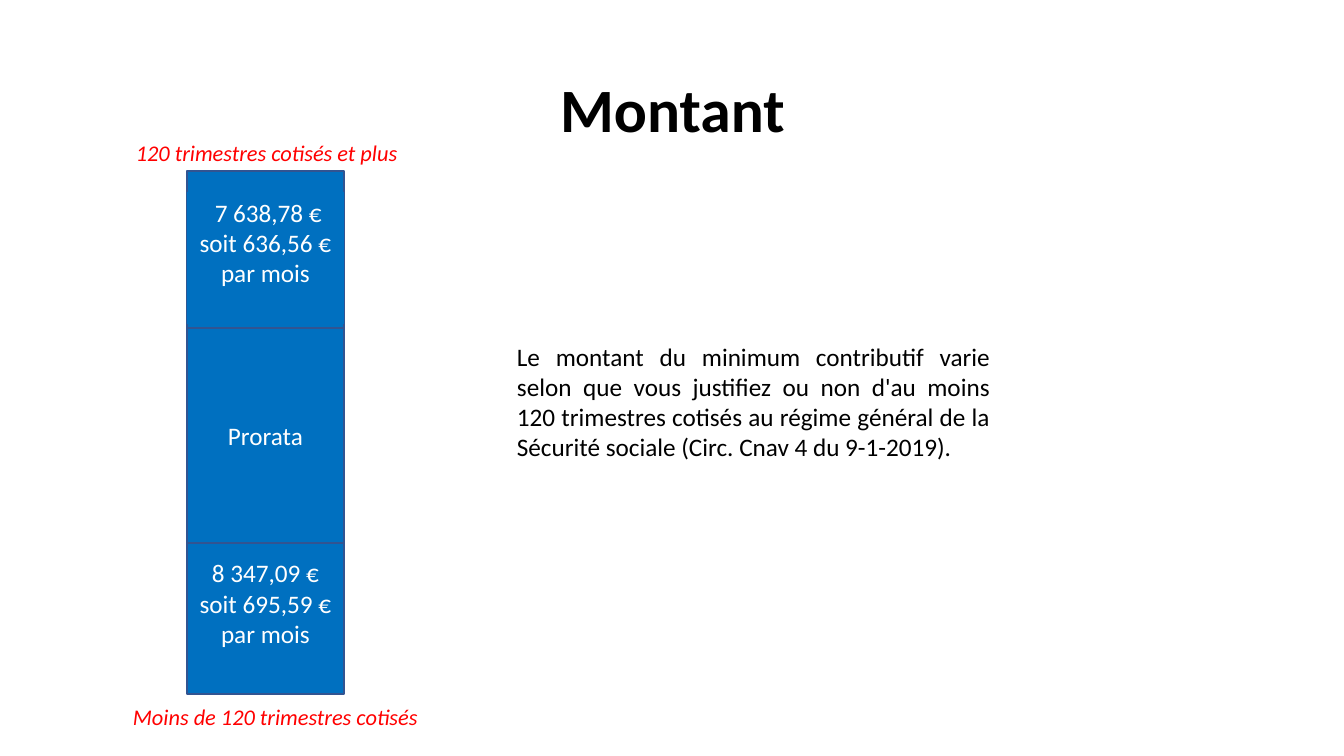
from pptx import Presentation
from pptx.dml.color import RGBColor
from pptx.enum.shapes import MSO_SHAPE as Shape
from pptx.enum.text import MSO_ANCHOR as Anchor, PP_ALIGN as Align
from pptx.util import Emu, Pt

BLACK = RGBColor(0x00, 0x00, 0x00)
WHITE = RGBColor(0xFF, 0xFF, 0xFF)
RED = RGBColor(0xFF, 0x00, 0x00)
BLUE = RGBColor(0x00, 0x70, 0xC0)
OUTLINE = RGBColor(0x32, 0x54, 0x91)

PX = 914400 / 100.8
TITLE_ONLY = 5
BAR_LEFT, BAR_WIDTH = 187, 157
BAR_EDGES = [171, 328, 543, 694]


def px(length):
    return Emu(round(length * PX))


class Page:
    font_name = "Calibri"

    def __init__(self, deck):
        self.slide = deck.slides.add_slide(deck.slide_layouts[TITLE_ONLY])

    def fill_text(self, frame, text, size, color, align, bold=False, italic=False):
        frame.word_wrap = True
        para = frame.paragraphs[0]
        para.alignment = align
        span = para.add_run()
        span.text = text
        span.font.name = self.font_name
        span.font.size = Pt(size)
        span.font.bold = bold
        span.font.italic = italic
        span.font.color.rgb = color
        return para

    def title(self, text, left, top, width, height):
        box = self.slide.shapes.title
        box.left, box.top, box.width, box.height = map(px, (left, top, width, height))
        box.text_frame.vertical_anchor = Anchor.MIDDLE
        para = self.fill_text(box.text_frame, text, 44, BLACK, Align.CENTER, bold=True)
        para.line_spacing = 0.9

    def block(self, top, height, text="", outlined=True, anchor=Anchor.MIDDLE, bottom_inset=5):
        """Add one blue block of the vertical bar."""
        box = self.slide.shapes.add_shape(
            Shape.RECTANGLE, *map(px, (BAR_LEFT, top, BAR_WIDTH, height)))
        box.shadow.inherit = False
        box.fill.solid()
        box.fill.fore_color.rgb = BLUE
        if outlined:
            box.line.color.rgb = OUTLINE
            box.line.width = Pt(1)
        else:
            box.line.fill.background()
        if text:
            box.text_frame.vertical_anchor = anchor
            box.text_frame.margin_bottom = px(bottom_inset)
            self.fill_text(box.text_frame, text, 18, WHITE, Align.CENTER)

    def text(self, text, left, top, width, height, size, color, align=Align.LEFT, italic=False):
        box = self.slide.shapes.add_textbox(*map(px, (left, top, width, height)))
        self.fill_text(box.text_frame, text, size, color, align, italic=italic)


def main():
    deck = Presentation()
    deck.slide_width, deck.slide_height = px(1344), px(756)
    page = Page(deck)
    page.title("Montant", 93, 40, 1159, 146)

    top, upper, lower, bottom = BAR_EDGES
    page.block(lower, bottom - lower, "8 347,09 € soit 695,59 € par mois", bottom_inset=36)
    page.block(upper, lower - upper, "Prorata")
    page.block(top, upper - top)
    page.block(192, 132, " 7 638,78 € soit 636,56 € par mois", outlined=False, anchor=Anchor.TOP)

    page.text("120 trimestres cotisés et plus", 126, 134, 289, 37, 16, RED, italic=True)
    page.text("Moins de 120 trimestres cotisés", 123, 698, 371, 37, 16, RED, italic=True)
    page.text(
        "Le montant du minimum contributif varie selon que vous justifiez ou non d'au moins "
        "120 trimestres cotisés au régime général de la Sécurité sociale "
        "(Circ. Cnav 4 du 9-1-2019).",
        507, 336, 493, 132, 18, BLACK, Align.JUSTIFY)
    deck.save("out.pptx")


if __name__ == "__main__":
    main()
